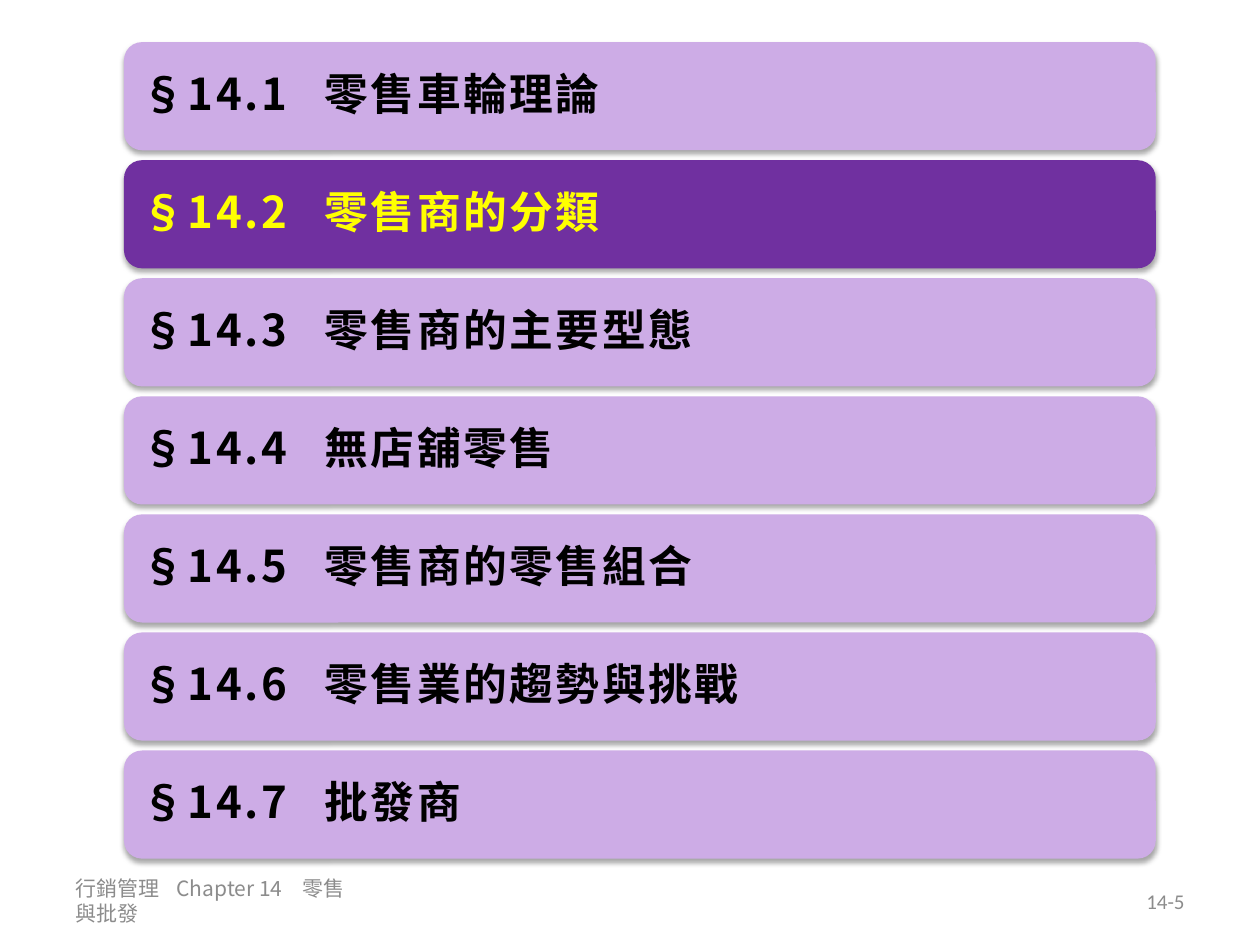
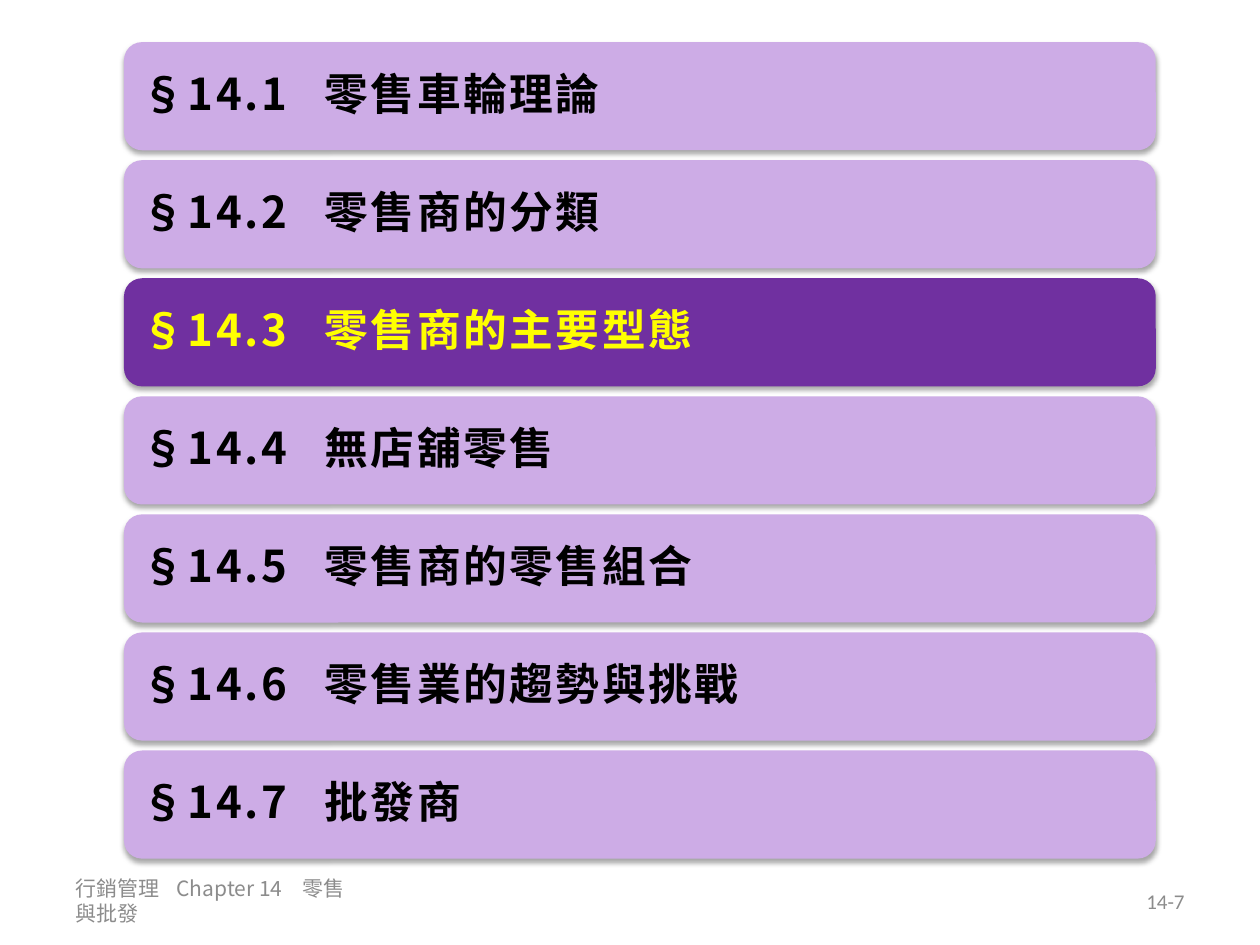
from lxml import etree
from pptx import Presentation
from pptx.dml.color import RGBColor
from pptx.enum.shapes import MSO_SHAPE
from pptx.enum.text import MSO_ANCHOR, PP_ALIGN
from pptx.oxml.ns import qn
from pptx.util import Cm, Pt

ROUNDED = MSO_SHAPE.ROUNDED_RECTANGLE
MIDDLE = MSO_ANCHOR.MIDDLE
LEFT, RIGHT = PP_ALIGN.LEFT, PP_ALIGN.RIGHT

# Shared style
LATIN_FONT = "Calibri"
CJK_FONT = "Noto Sans CJK SC"
LILAC, PURPLE = "CDACE6", "7030A0"
BLACK, YELLOW, GREY = "000000", "FFFF00", "8C8C8C"
BAR_FORMAT = {"size": Pt(25), "bold": True}
FOOTER_FORMAT = {"size": Pt(12), "bold": False}

# Bar stack, in centimetres
BAR_LEFT, BAR_TOP, BAR_WIDTH, BAR_HEIGHT = 2.5, 0.85, 20.8, 2.18
BAR_PITCH = 2.38
BAR_TAB = 3.69
FOOTER_TOP, FOOTER_HEIGHT = 17.65, 1.02
FOOTER_TABS = (2.04, 4.58)

# Content
CHAPTER = 14
SECTIONS = ("零售車輪理論", "零售商的分類", "零售商的主要型態", "無店舖零售",
            "零售商的零售組合", "零售業的趨勢與挑戰", "批發商")
FOOTER = f"行銷管理\tChapter {CHAPTER}\t零售與批發"
AGENDAS = ((2, 5), (3, 7))  # current section, page number


def color(hex_value):
    return RGBColor.from_string(hex_value)


def add_tabs(paragraph, *stops):
    tabs = etree.SubElement(paragraph._p.get_or_add_pPr(), qn("a:tabLst"))
    for stop in stops:
        etree.SubElement(tabs, qn("a:tab"), pos=str(Cm(stop)), algn="l")


def add_run(paragraph, text, font_name, hex_value, formats, spacing=0):
    run = paragraph.add_run()
    run.text = text
    run.font.name = font_name
    run.font.color.rgb = color(hex_value)
    for attribute, value in formats.items():
        setattr(run.font, attribute, value)
    properties = run._r.get_or_add_rPr()
    etree.SubElement(properties, qn("a:ea"), typeface=CJK_FONT)
    if spacing:
        properties.set("spc", str(round(spacing * 100)))


def add_soft_shadow(shape):
    shape.shadow.inherit = False
    effects = shape._element.spPr.find(qn("a:effectLst"))
    shadow = etree.SubElement(
        effects, qn("a:outerShdw"), blurRad=str(Pt(3.1)), dist=str(Pt(1.8)),
        dir="5400000", rotWithShape="0")
    tint = etree.SubElement(shadow, qn("a:srgbClr"), val=BLACK)
    etree.SubElement(tint, qn("a:alpha"), val="35000")


def add_section_bar(slide, number, title, is_current):
    top = BAR_TOP + (number - 1) * BAR_PITCH
    bar = slide.shapes.add_shape(
        ROUNDED, Cm(BAR_LEFT), Cm(top), Cm(BAR_WIDTH), Cm(BAR_HEIGHT))
    bar.fill.solid()
    bar.fill.fore_color.rgb = color(PURPLE if is_current else LILAC)
    bar.line.fill.background()
    add_soft_shadow(bar)

    frame = bar.text_frame
    frame.word_wrap = True
    frame.vertical_anchor = MIDDLE
    for side in ("left", "right", "top", "bottom"):
        setattr(frame, f"margin_{side}", Cm(0.25))

    heading = frame.paragraphs[0]
    add_tabs(heading, BAR_TAB)
    heading.alignment = LEFT
    heading.line_spacing = 0.9
    heading.space_after = Pt(8.75)
    ink = YELLOW if is_current else BLACK
    add_run(heading, f"§{CHAPTER}.{number}\t", CJK_FONT, ink, BAR_FORMAT, 1.5)
    add_run(heading, title, LATIN_FONT, ink, BAR_FORMAT, 1.5)


def add_footer_text(slide, left, width, text, font_name, alignment, tabs=()):
    box = slide.shapes.add_textbox(
        Cm(left), Cm(FOOTER_TOP), Cm(width), Cm(FOOTER_HEIGHT))
    frame = box.text_frame
    frame.word_wrap = True
    frame.vertical_anchor = MIDDLE
    line = frame.paragraphs[0]
    if tabs:
        add_tabs(line, *tabs)
    line.alignment = alignment
    add_run(line, text, font_name, GREY, FOOTER_FORMAT)


def add_agenda_slide(deck, current, page):
    slide = deck.slides.add_slide(deck.slide_layouts[6])
    # Footer and page number
    add_footer_text(slide, 1.27, 6.22, FOOTER, CJK_FONT, LEFT, FOOTER_TABS)
    add_footer_text(slide, 18.21, 5.92, f"{CHAPTER}-{page}", LATIN_FONT, RIGHT)
    # Chapter sections, with the current one highlighted
    for number, title in enumerate(SECTIONS, start=1):
        add_section_bar(slide, number, title, number == current)


def main():
    deck = Presentation()
    deck.slide_width, deck.slide_height = Cm(25.4), Cm(19.05)
    for current, page in AGENDAS:
        add_agenda_slide(deck, current, page)
    deck.save("out.pptx")


if __name__ == "__main__":
    main()
